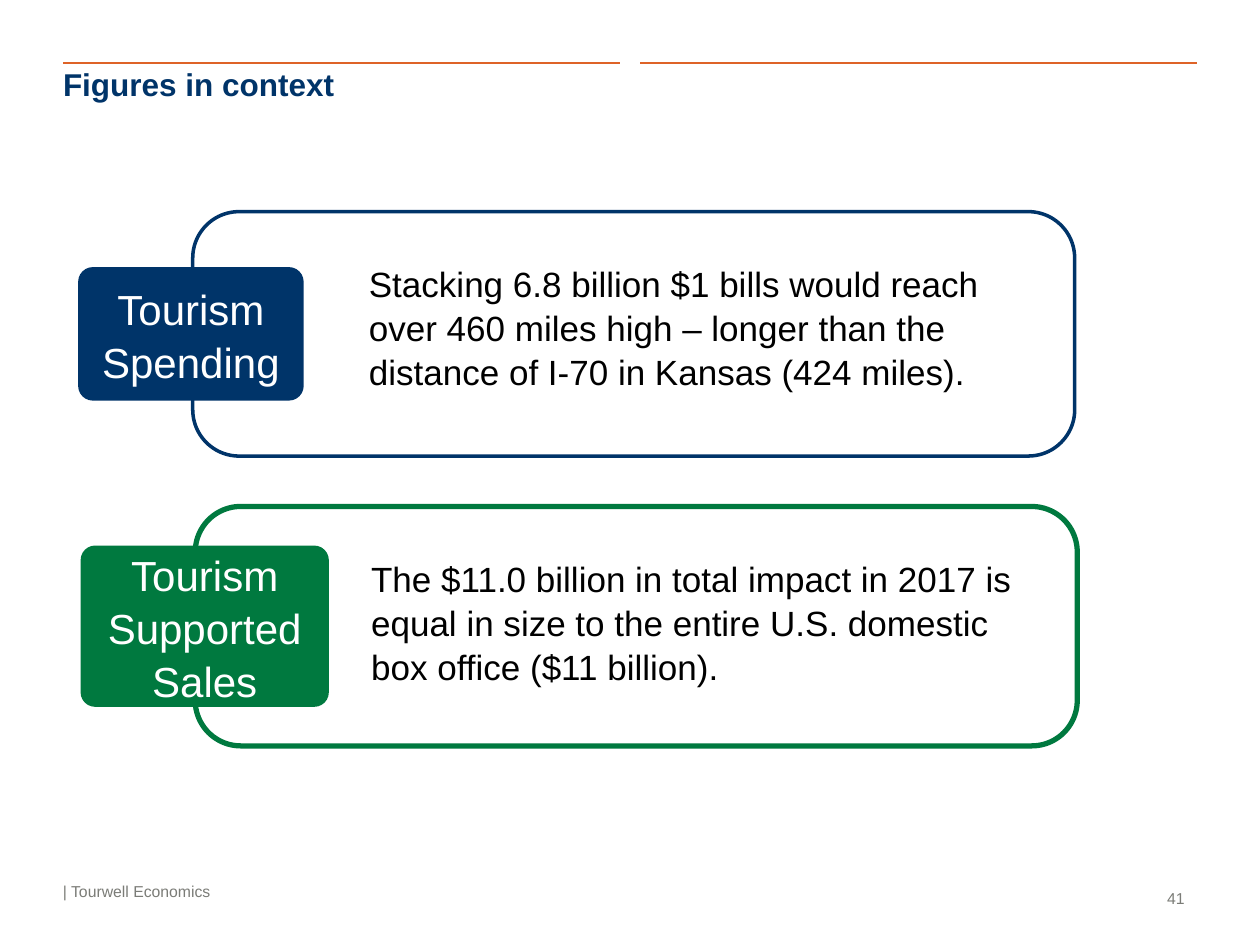
from dataclasses import dataclass

import pptx
import pptx.dml.color
import pptx.enum.shapes
import pptx.enum.text
import pptx.util
from lxml import etree
from pptx.oxml.ns import qn
from pptx.util import Inches

ALIGN = pptx.enum.text.PP_ALIGN
ANCHOR = pptx.enum.text.MSO_ANCHOR
NAVY, GREEN, ORANGE = "003469", "00793F", "DE6328"
GREY, WHITE, BLACK = "7B7C77", "FFFFFF", "000000"
Box = tuple[float, float, float, float]


@dataclass
class Card:
    color: str
    frame: Box
    line_width: float
    body: str
    label_box: Box
    label_adj: float
    label: str


CARDS = [
    Card(GREEN, (1.55, 4.02, 7, 1.9), 3,
         "The $11.0 billion in total impact in 2017 is equal in size to the "
         "entire U.S. domestic box office ($11 billion).",
         (0.64, 4.33, 1.97, 1.28), 0.09, "Tourism Supported Sales"),
    Card(NAVY, (1.53, 1.68, 7, 1.94), 2,
         "Stacking 6.8 billion $1 bills would reach over 460 miles high – "
         "longer than the distance of I-70 in Kansas (424 miles).",
         (0.62, 2.12, 1.79, 1.06), 0.11, "Tourism Spending"),
]


def rgb(color: str) -> pptx.dml.color.RGBColor:
    return pptx.dml.color.RGBColor.from_string(color)


def write(sp, text: str, size: float, color: str, align=ALIGN.LEFT,
          anchor=ANCHOR.TOP, insets: Box = (0.1, 0.05, 0.1, 0.05),
          bold: bool = False, spacing: float = 1.0) -> None:
    """Fill a shape with one paragraph; insets are left, top, right, bottom."""
    tf = sp.text_frame
    tf.word_wrap = True
    tf.vertical_anchor = anchor
    for side, inset in zip(("left", "top", "right", "bottom"), insets):
        setattr(tf, f"margin_{side}", Inches(inset))
    p = tf.paragraphs[0]
    p.alignment = align
    p.line_spacing = spacing
    r = p.add_run()
    r.text = text
    font = {"name": "Arial", "size": pptx.util.Pt(size), "bold": bold}
    for name, value in font.items():
        setattr(r.font, name, value)
    r.font.color.rgb = rgb(color)


def add_text(s, box: Box, text: str, size: float, color: str, **options) -> None:
    write(s.shapes.add_textbox(*map(Inches, box)), text, size, color, **options)


def add_rule(s, x1: float, x2: float, y: float) -> None:
    line = s.shapes.add_connector(
        pptx.enum.shapes.MSO_CONNECTOR.STRAIGHT,
        Inches(x1), Inches(y), Inches(x2), Inches(y))
    line.line.color.rgb = rgb(ORANGE)
    line.line.width = pptx.util.Pt(1.25)
    etree.SubElement(line._element.spPr, qn("a:effectLst"))


def add_rounded(s, box: Box, adj: float, fill: str):
    sp = s.shapes.add_shape(
        pptx.enum.shapes.MSO_SHAPE.ROUNDED_RECTANGLE, *map(Inches, box))
    sp.adjustments[0] = adj
    sp.shadow.inherit = False
    sp.fill.solid()
    sp.fill.fore_color.rgb = rgb(fill)
    sp.line.fill.background()
    return sp


def add_card(s, card: Card) -> None:
    frame = add_rounded(s, card.frame, 0.19, WHITE)
    frame.line.color.rgb = rgb(card.color)
    frame.line.width = pptx.util.Pt(card.line_width)
    write(frame, card.body, 20, BLACK, insets=(1.29, 0.28, 0.1, 0.05), spacing=1.05)
    label = add_rounded(s, card.label_box, card.label_adj, card.color)
    write(label, card.label, 24, WHITE, align=ALIGN.CENTER,
          anchor=ANCHOR.MIDDLE, spacing=1.05)


def main() -> None:
    prs = pptx.Presentation()
    prs.slide_width, prs.slide_height = Inches(10), Inches(7.5)
    s = prs.slides.add_slide(prs.slide_layouts[6])
    for x in (0.5, 5.08):
        add_rule(s, x, x + 4.42, 0.5)
    add_text(s, (0.5, 0.5, 4.42, 1.05), "Figures in context", 18, NAVY,
             bold=True, insets=(0, 0, 0.1, 0.05), spacing=1.05)
    add_text(s, (0.5, 7, 2.17, 0.25), "| Tourwell Economics", 9, GREY,
             insets=(0, 0, 0.1, 0))
    add_text(s, (7.33, 7, 2.17, 0.25), "41", 9, GREY,
             align=ALIGN.RIGHT, anchor=ANCHOR.MIDDLE)
    for card in CARDS:
        add_card(s, card)
    prs.save("out.pptx")


if __name__ == "__main__":
    main()
